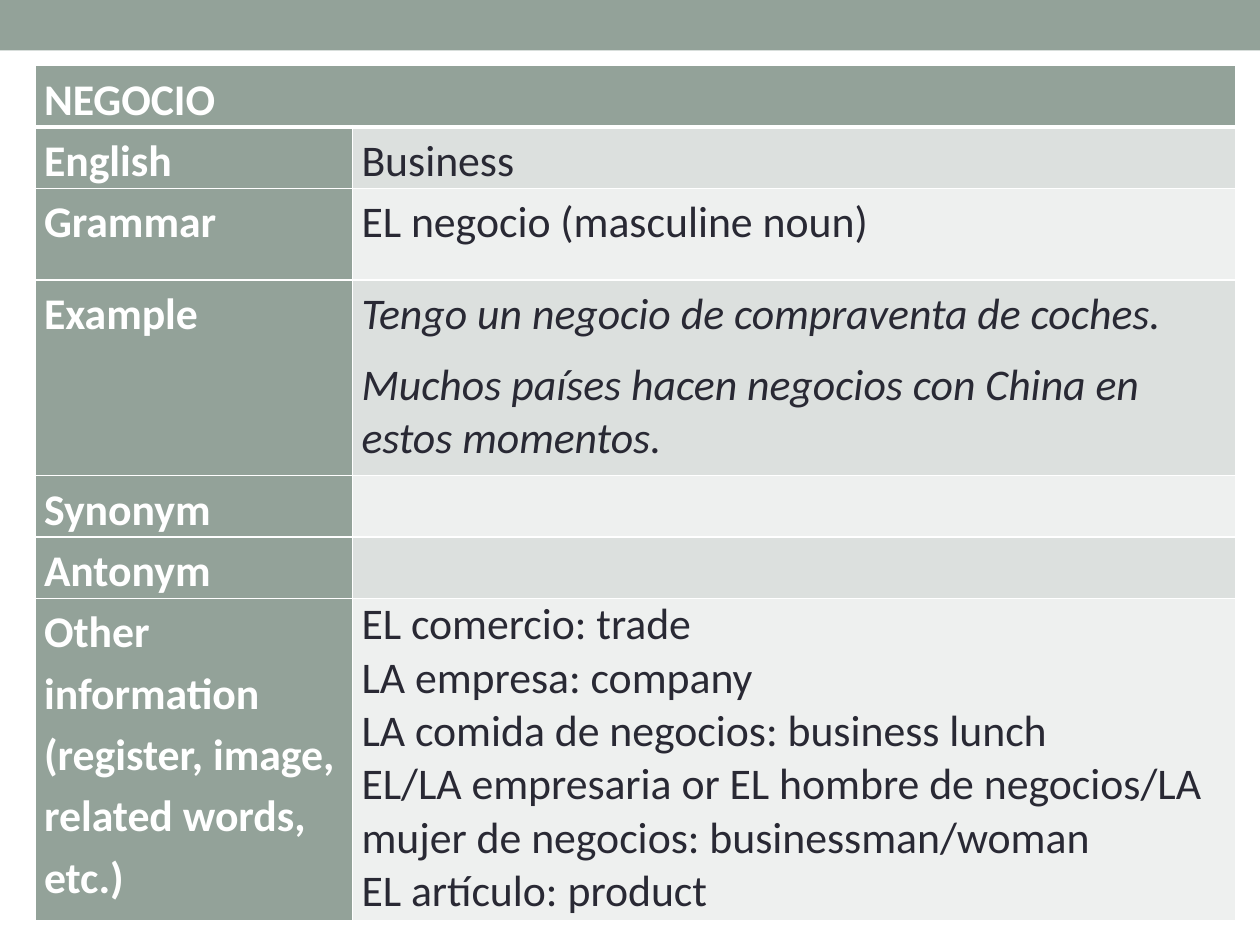
from dataclasses import dataclass

from lxml import etree
from pptx import Presentation
from pptx import util as u
from pptx.dml.color import RGBColor
from pptx.enum import shapes
from pptx.oxml import ns

SAGE = RGBColor(0x93, 0xA2, 0x99)
BAND_DARK = RGBColor(0xDC, 0xE0, 0xDE)
BAND_LIGHT = RGBColor(0xEE, 0xF0, 0xEF)
INK = RGBColor(0x29, 0x29, 0x34)
WHITE = RGBColor(0xFF, 0xFF, 0xFF)

COLUMN_WIDTHS = (2.52, 7.01)
HEADER_HEIGHT = 0.48


@dataclass(frozen=True)
class Entry:
    label: str
    height: float
    lines: tuple[str, ...] = ()
    italic: bool = False
    compact: bool = False


ENTRIES = (
    Entry("English", 0.48, ("Business",)),
    Entry("Grammar", 0.73, ("EL negocio (masculine noun)",)),
    Entry("Example", 1.55, (
        "Tengo un negocio de compraventa de coches.",
        "Muchos países hacen negocios con China en estos momentos.",
    ), italic=True),
    Entry("Synonym", 0.48),
    Entry("Antonym", 0.48),
    Entry("Other information (register, image, related words, etc.)", 2.56, (
        "EL comercio: trade",
        "LA empresa: company",
        "LA comida de negocios: business lunch",
        "EL/LA empresaria or EL hombre de negocios/LA mujer de negocios: businessman/woman",
        "EL artículo: product",
    ), compact=True),
)


def set_borders(cell, bottom_width: float = 1) -> None:
    properties = cell._tc.get_or_add_tcPr()
    sides = (("lnL", 1), ("lnR", 1), ("lnT", 1), ("lnB", bottom_width))
    for position, (side, width) in enumerate(sides):
        line = etree.Element(ns.qn(f"a:{side}"), w=str(u.Pt(width)))
        fill = etree.SubElement(line, ns.qn("a:solidFill"))
        etree.SubElement(fill, ns.qn("a:srgbClr"), val=str(WHITE))
        properties.insert(position, line)


def style_cell(cell, fill: RGBColor, bottom_width: float = 1) -> None:
    cell.margin_left = cell.margin_right = u.Inches(0.07)
    cell.margin_top = cell.margin_bottom = 0
    cell.fill.solid()
    cell.fill.fore_color.rgb = fill
    set_borders(cell, bottom_width)


def write_lines(cell, lines: tuple[str, ...], color: RGBColor, bold: bool = False,
                italic: bool = False, compact: bool = False) -> None:
    """Write one paragraph per line; compact drops the spacing between them."""
    cell.text = "\n".join(lines)
    for index, paragraph in enumerate(cell.text_frame.paragraphs):
        paragraph.line_spacing = 1.15 if index == 0 and not compact else 1.0
        paragraph.space_after = u.Pt(0 if compact else 10)
        font = paragraph.font
        font.name, font.size = "Calibri", u.Pt(25)
        font.bold, font.italic = bold, italic
        font.color.rgb = color


def add_top_band(slide) -> None:
    band = slide.shapes.add_shape(shapes.MSO_SHAPE.RECTANGLE, 0, 0, u.Inches(10), u.Inches(0.4))
    band.shadow.inherit = False
    band.fill.solid()
    band.fill.fore_color.rgb = SAGE
    band.line.fill.background()


def add_vocabulary_table(slide, word: str, entries: tuple[Entry, ...]) -> None:
    heights = (HEADER_HEIGHT, *(entry.height for entry in entries))
    table = slide.shapes.add_table(
        len(heights), len(COLUMN_WIDTHS), u.Inches(0.28), u.Inches(0.52),
        u.Inches(sum(COLUMN_WIDTHS)), u.Inches(sum(heights))).table
    table.first_col = True
    for column, width in zip(table.columns, COLUMN_WIDTHS):
        column.width = u.Inches(width)
    for row, height in zip(table.rows, heights):
        row.height = u.Inches(height)

    header = table.cell(0, 0)
    header.merge(table.cell(0, 1))
    for cell in table.rows[0].cells:
        style_cell(cell, SAGE, bottom_width=3)
    write_lines(header, (word,), WHITE, bold=True)

    for index, entry in enumerate(entries):
        label, content = table.rows[index + 1].cells
        style_cell(label, SAGE)
        write_lines(label, (entry.label,), WHITE, bold=True)
        style_cell(content, BAND_LIGHT if index % 2 else BAND_DARK)
        if entry.lines:
            write_lines(content, entry.lines, INK, italic=entry.italic, compact=entry.compact)


def main() -> None:
    presentation = Presentation()
    presentation.slide_width, presentation.slide_height = u.Inches(10), u.Inches(7.5)
    slide = presentation.slides.add_slide(presentation.slide_layouts[6])
    add_top_band(slide)
    add_vocabulary_table(slide, "NEGOCIO", ENTRIES)
    presentation.save("out.pptx")


if __name__ == "__main__":
    main()
